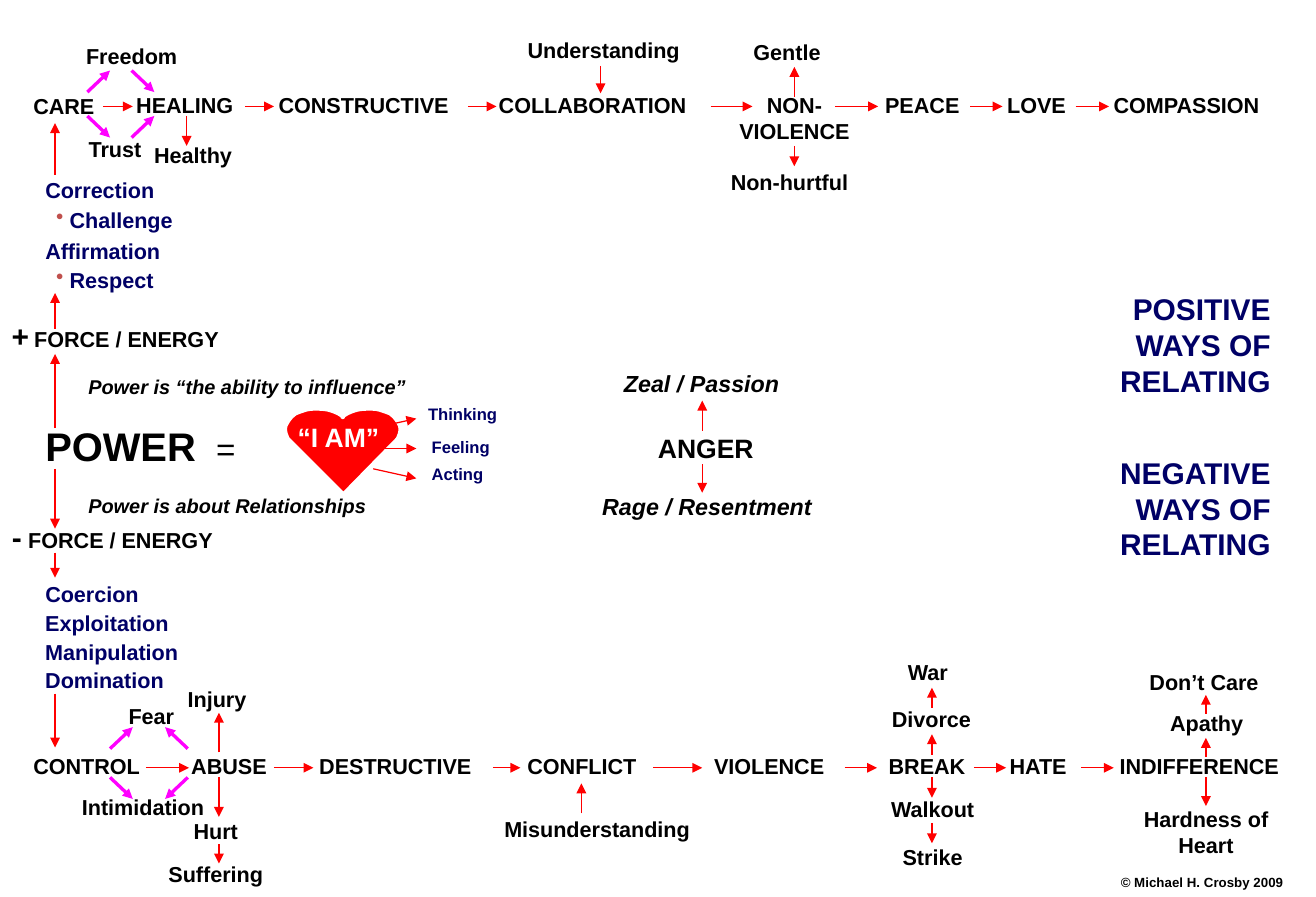
"""Draw a map of the positive and negative ways of relating."""
from lxml import etree
from pptx import Presentation, util as u
from pptx.dml.color import RGBColor
from pptx.enum import shapes, text
from pptx.oxml.ns import qn

RED, PINK, NAVY, BLACK, WHITE = "FF0000", "FF00FF", "000066", "000000", "FFFFFF"
LEFT, MID, RIGHT = text.PP_ALIGN.LEFT, text.PP_ALIGN.CENTER, text.PP_ALIGN.RIGHT
hue = RGBColor.from_string

deck = Presentation()
deck.slide_width, deck.slide_height = u.Inches(11), u.Inches(7.5)
slide = deck.slides.add_slide(deck.slide_layouts[6])


def style(font, size, ink=BLACK, bold=True, ital=False, face="Arial"):
    font.name, font.size = face, u.Pt(size)
    font.bold, font.italic = bold, ital
    font.color.rgb = hue(ink)


def label(x, y, wide, size, rows=1):
    high = rows * size / 60 + 0.1
    box = slide.shapes.add_textbox(*map(u.Inches, (x, y, wide, high)))
    box.text_frame.word_wrap = True
    return box.text_frame.paragraphs[0]


curves = [
    [(2.87, 3.49), (2.85, 3.47), (2.81, 3.45), (2.78, 3.44)],
    [(2.78, 3.44), (2.73, 3.42), (2.68, 3.42), (2.62, 3.42)],
    [(2.62, 3.42), (2.57, 3.42), (2.52, 3.44), (2.47, 3.46)],
    [(2.47, 3.46), (2.43, 3.49), (2.41, 3.52), (2.39, 3.56)],
    [(2.39, 3.56), (2.38, 3.6), (2.39, 3.63), (2.41, 3.67)],
]
half = []
for curve in curves:
    for step in range(8):
        t = step / 8
        parts = ((1 - t) ** 3, 3 * t * (1 - t) ** 2, 3 * t * t * (1 - t), t ** 3)
        half.append([sum(p * c[i] for p, c in zip(parts, curve)) for i in (0, 1)])
half.append([2.41, 3.67])
edge = half + [[2.87, 4.13]] + [[5.73 - x, y] for x, y in reversed(half)]
edge = [(u.Inches(x), u.Inches(y)) for x, y in edge]
pen = slide.shapes.build_freeform(*edge[0])
pen.add_line_segments(edge[1:], close=True)
heart = pen.convert_to_shape()
heart.shadow.inherit = False
heart.fill.solid()
heart.fill.fore_color.rgb = hue(RED)
heart.line.color.rgb = hue(WHITE)
heart.line.width = u.Pt(2)

across = {
    0.89: [(0.86, 1.11), (2.05, 2.29), (3.91, 4.15), (5.94, 6.29),
           (6.98, 7.34), (8.11, 8.38), (8.99, 9.27)],
    3.75: [(3.12, 3.48)],
    6.42: [(1.22, 1.58), (2.29, 2.62), (4.12, 4.35), (5.46, 5.87),
           (7.06, 7.33), (8.14, 8.41), (9.04, 9.31)],
}
down = {
    0.46: [(1.46, 1.03), (2.75, 2.45), (3.58, 2.96), (3.92, 4.42),
           (4.62, 4.83), (5.8, 6.25)],
    1.56: [(0.97, 1.22)],
    1.83: [(6.29, 5.96), (6.5, 6.83), (7.06, 7.22)],
    4.86: [(6.8, 6.55)],
    5.02: [(0.55, 0.78)],
    5.87: [(3.6, 3.35), (3.88, 4.12)],
    6.64: [(0.81, 0.56), (1.22, 1.39)],
    7.79: [(5.92, 5.75), (6.31, 6.14), (6.5, 6.67), (6.88, 7.05)],
    10.08: [(5.97, 5.81), (6.33, 6.17), (6.5, 6.74)],
}
thin = [(a, y, b, y) for y, spans in across.items() for a, b in spans]
thin += [(x, a, x, b) for x, spans in down.items() for a, b in spans]
thin += [(3.12, 3.58, 3.48, 3.5), (3.12, 3.92, 3.48, 4)]
thick = [
    (0.73, 0.77, 0.92, 0.59), (1.1, 0.59, 1.29, 0.77),
    (0.73, 0.97, 0.92, 1.15), (1.1, 1.15, 1.29, 0.97),
    (0.92, 6.26, 1.11, 6.08), (0.92, 6.5, 1.11, 6.68),
    (1.57, 6.26, 1.38, 6.08), (1.57, 6.5, 1.38, 6.68),
]
for ink, width, group in ((RED, 0.75, thin), (PINK, 2, thick)):
    for ends in group:
        arrow = slide.shapes.add_connector(
            shapes.MSO_CONNECTOR.STRAIGHT, *map(u.Inches, ends))
        arrow.line.color.rgb = hue(ink)
        arrow.line.width = u.Pt(width)
        etree.SubElement(arrow.line._get_or_add_ln(), qn("a:tailEnd"), type="triangle")
        etree.SubElement(arrow._element.spPr, qn("a:effectLst"))

groups = [
    (13, BLACK, False, LEFT, 1, [
        ("CARE", 0.18, 0.73, 1.67), ("HEALING", 1.04, 0.72, 1.19),
        ("CONSTRUCTIVE", 2.23, 0.72, 1.83), ("COLLABORATION", 4.07, 0.72, 2.02),
        ("PEACE", 7.3, 0.72, 0.92), ("LOVE", 8.32, 0.72, 0.82),
        ("COMPASSION", 9.21, 0.72, 1.65), ("Healthy", 1.19, 1.14, 1.17),
        ("Gentle", 6.2, 0.28, 1.07), ("Non-hurtful", 6.01, 1.36, 1.72),
        ("CONTROL", 0.18, 6.25, 1.56), ("ABUSE", 1.5, 6.25, 1.01),
        ("DESTRUCTIVE", 2.57, 6.25, 1.65), ("CONFLICT", 4.31, 6.25, 1.28),
        ("VIOLENCE", 5.87, 6.25, 1.28), ("BREAK", 7.33, 6.25, 1.1),
        ("HATE", 8.34, 6.25, 0.82), ("INDIFFERENCE", 9.26, 6.25, 1.74),
        ("Injury", 1.47, 5.69, 0.78), ("Hurt", 1.52, 6.79, 0.66),
        ("Suffering", 1.31, 7.15, 1.14), ("War", 7.49, 5.46, 0.73),
        ("Don’t Care", 9.51, 5.54, 1.38)]),
    (13, BLACK, False, MID, 1, [
        ("Freedom", 0.46, 0.31, 1.28), ("Trust", 0.55, 1.09, 0.82),
        ("Understanding", 3.6, 0.26, 2.89), ("Misunderstanding", 3.58, 6.77, 2.82),
        ("Fear", 0.9, 5.83, 0.73), ("Intimidation", 0.37, 6.59, 1.65),
        ("Divorce", 7.19, 5.85, 1.19), ("Walkout", 7.17, 6.61, 1.25),
        ("Strike", 7.2, 7.01, 1.19), ("Apathy", 9.49, 5.89, 1.19)]),
    (13, BLACK, False, MID, 2, [
        ("NON-VIOLENCE", 6, 0.72, 1.28), ("Hardness of Heart", 9.44, 6.69, 1.28)]),
    (13, NAVY, False, LEFT, 1, [
        ("Correction", 0.28, 1.43, 1.68), ("Affirmation", 0.28, 1.94, 1.28),
        ("Coercion", 0.28, 4.81, 2.11), ("Exploitation", 0.28, 5.05, 1.47),
        ("Manipulation", 0.28, 5.29, 1.93), ("Domination", 0.28, 5.53, 1.56)]),
    (10, NAVY, False, LEFT, 1, [
        ("Thinking", 3.48, 3.33, 1.01), ("Feeling", 3.51, 3.6, 0.98),
        ("Acting", 3.51, 3.83, 0.98)]),
    (12, BLACK, True, LEFT, 1, [
        ("Power is “the ability to influence”", 0.64, 3.08, 3.3),
        ("Power is about Relationships", 0.64, 4.08, 3.3)]),
    (14, BLACK, True, MID, 1, [
        ("Zeal / Passion", 4.95, 3.04, 1.83), ("Rage / Resentment", 4.67, 4.07, 2.48)]),
    (16, BLACK, False, MID, 1, [("ANGER", 5.26, 3.56, 1.28)]),
    (16, WHITE, False, LEFT, 1, [("“I AM”", 2.39, 3.47, 1.19)]),
    (18, NAVY, False, RIGHT, 3, [
        ("POSITIVE WAYS OF RELATING", 9.08, 2.38, 1.64),
        ("NEGATIVE WAYS OF RELATING", 8.99, 3.75, 1.73)]),
    (8, BLACK, False, LEFT, 1, [("© Michael H. Crosby 2009", 9.27, 7.26, 1.6)]),
]
for size, ink, ital, align, rows, words in groups:
    for word, x, y, wide in words:
        para = label(x, y, wide, size, rows)
        para.text, para.alignment = word, align
        style(para.font, size, ink, ital=ital)

for word, y, wide in (("Challenge", 1.68, 1.68), ("Respect", 2.18, 1.47)):
    para = label(0.37, y, wide, 13)
    etree.SubElement(para._p.get_or_add_pPr(), qn("a:buChar"), char="•")
    for bit, ink, bold in ((" ", "C0504D", False), (word, NAVY, True)):
        run = para.add_run()
        run.text = bit
        style(run.font, 13, ink, bold)

force = ("FORCE / ENERGY", 13, True, "Arial")
mixed = [
    (0.28, 3.48, 1.81, [("POWER ", 24, True, "Arial"), (" =", 20, False, "Arial")]),
    (0, 2.61, 2.57, [("+", 18, True, "Arial"), (" ", 12, False, "Times New Roman"), force]),
    (0, 4.29, 2.11, [("-", 18, True, "Arial"), (" ", 14, True, "Arial"), force]),
]
for x, y, wide, bits in mixed:
    para = label(x, y, wide, bits[0][1])
    for bit, size, bold, face in bits:
        run = para.add_run()
        run.text = bit
        style(run.font, size, BLACK, bold, face=face)

deck.save("out.pptx")
